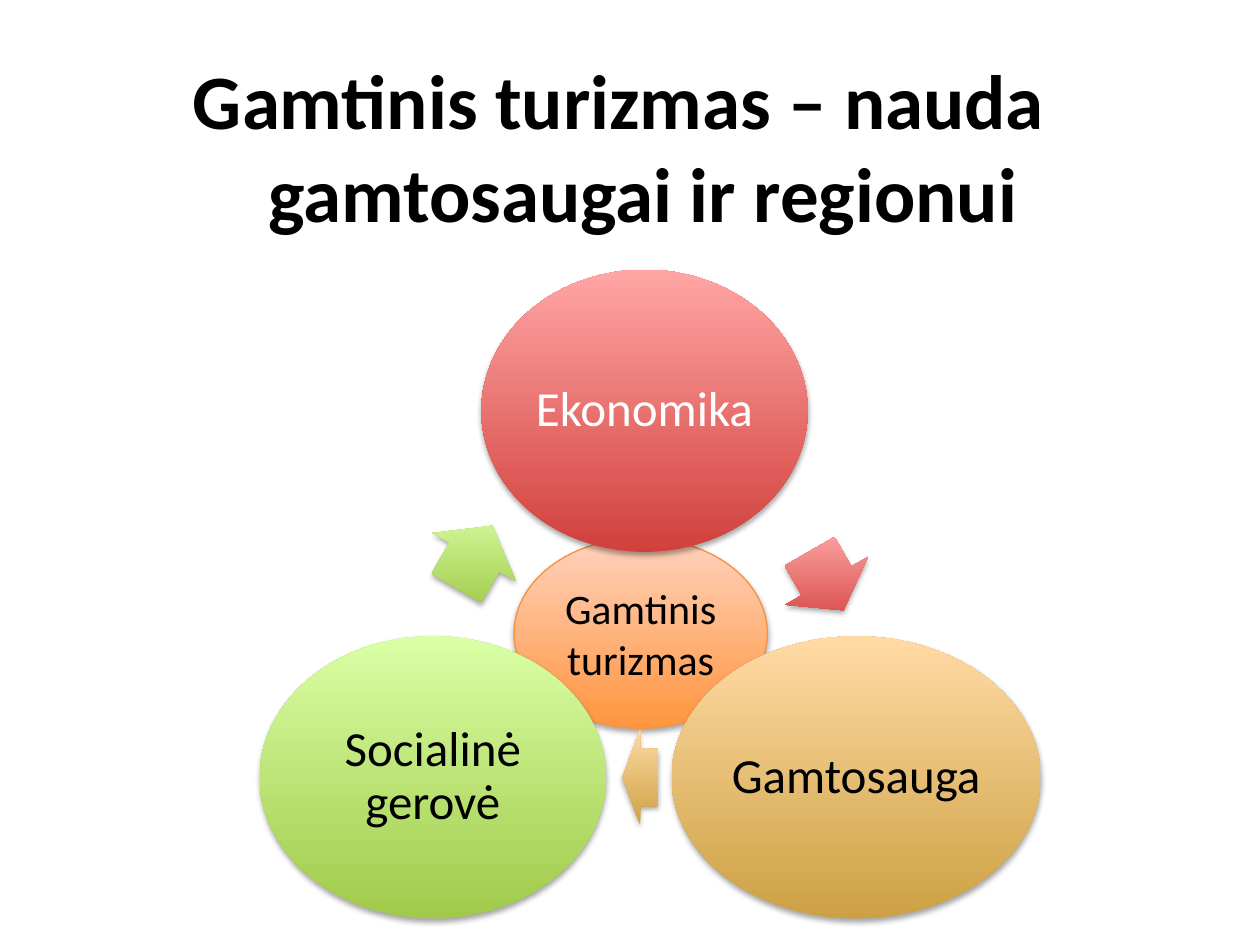
import math
from dataclasses import dataclass

import pptx
import pptx.dml.color
import pptx.enum.shapes
import pptx.enum.text
import pptx.oxml.ns
import pptx.util
from lxml import etree
from pptx.util import Inches

KIND = pptx.enum.shapes.MSO_SHAPE
ALIGN = pptx.enum.text.PP_ALIGN
ANCHOR = pptx.enum.text.MSO_ANCHOR
qn = pptx.oxml.ns.qn


@dataclass(frozen=True)
class Theme:
    font: str = "Calibri"
    title: int = 44
    label: int = 28
    core: int = 24
    dark: str = "000000"
    light: str = "FFFFFF"
    edge: str = "F69240"
    orange: tuple = ("FF953E", "FFD2BD")
    red: tuple = ("D1403C", "FFA6A5")
    tan: tuple = ("CDA143", "FFDAA5")
    green: tuple = ("A0CA4A", "DAFFA5")


@dataclass(frozen=True)
class Node:
    """One circle of the cycle, and the arrow that leaves it."""
    text: str
    width: float
    fill: tuple
    ink: str
    arrow_x: float
    arrow_y: float
    arrow_w: float


THEME = Theme()
HUB_X, HUB_Y, RADIUS = 5.115, 5.2, 1.94
NODE_H, ARROW_H = 2.24, 0.76
NODES = (
    Node("Ekonomika", 2.59, THEME.red, THEME.light, 6.56, 4.61, 0.54),
    Node("Gamtosauga", 2.93, THEME.tan, THEME.dark, 5.08, 6.17, 0.28),
    Node("Socialinė gerovė", 2.75, THEME.green, THEME.dark, 3.765, 4.42, 0.57),
)


def rgb(code: str):
    return pptx.dml.color.RGBColor.from_string(code)


def add_shade(shape) -> None:
    """Give the shape a soft shadow below it."""
    shape.shadow.inherit = False
    effects = shape._element.spPr.find(qn("a:effectLst"))
    outer = etree.SubElement(effects, qn("a:outerShdw"), blurRad="40000",
                             dist="23000", dir="5400000", rotWithShape="0")
    black = etree.SubElement(outer, qn("a:srgbClr"), val=THEME.dark)
    etree.SubElement(black, qn("a:alpha"), val="35000")


def add_solid(slide, kind, x: float, y: float, w: float, h: float, tones: tuple):
    """Add a shape centred on x, y that fades upward through the tones."""
    shape = slide.shapes.add_shape(kind, Inches(x - w / 2), Inches(y - h / 2),
                                   Inches(w), Inches(h))
    shape.fill.gradient()
    shape.fill.gradient_angle = 90
    for stop, tone in zip(shape.fill.gradient_stops, tones):
        stop.color.rgb = rgb(tone)
    shape._element.spPr.find(qn("a:gradFill")).set("rotWithShape", "0")
    shape.line.fill.background()
    add_shade(shape)
    return shape


def write(shape, text: str, size: int, ink: str, bold: bool = False):
    frame = shape.text_frame
    frame.word_wrap = True
    para = frame.paragraphs[0]
    para.text = text
    para.alignment = ALIGN.CENTER
    para.font.name = THEME.font
    para.font.size = pptx.util.Pt(size)
    para.font.bold = bold
    para.font.color.rgb = rgb(ink)
    return para


def add_label(shape, text: str, size: int, ink: str, pad: float):
    frame = shape.text_frame
    frame.vertical_anchor = ANCHOR.MIDDLE
    frame.margin_left = frame.margin_right = Inches(pad)
    frame.margin_top = frame.margin_bottom = Inches(0.04)
    return write(shape, text, size, ink)


def add_title(slide) -> None:
    box = slide.shapes.add_textbox(Inches(0.61), Inches(0.37),
                                   Inches(8.61), Inches(1.41))
    para = write(box, "Gamtinis turizmas – nauda gamtosaugai ir regionui",
                 THEME.title, THEME.dark, True)
    props = para._p.get_or_add_pPr()
    props.set("marL", str(Inches(0.38)))
    props.set("indent", str(Inches(-0.38)))
    para.space_before = pptx.util.Pt(0)
    space = props.find(qn("a:spcBef"))
    space.clear()
    etree.SubElement(space, qn("a:spcPct"), val="20000")


def add_core(slide) -> None:
    core = add_solid(slide, KIND.OVAL, 5.085, 5.025, 2.01, 1.51, THEME.orange)
    core.line.color.rgb = rgb(THEME.edge)
    core.line.width = pptx.util.Pt(0.75)
    add_label(core, "Gamtinis turizmas", THEME.core, THEME.dark, 0.08)


def add_node(slide, node: Node, turn: int) -> None:
    angle = math.radians(turn - 90)
    disc = add_solid(slide, KIND.OVAL, HUB_X + RADIUS * math.cos(angle),
                     HUB_Y + RADIUS * math.sin(angle), node.width, NODE_H, node.fill)
    add_label(disc, node.text, THEME.label, node.ink, 0.04).line_spacing = 0.9
    arrow = add_solid(slide, KIND.RIGHT_ARROW, node.arrow_x, node.arrow_y,
                      node.arrow_w, ARROW_H, node.fill)
    arrow.adjustments[0] = 0.6
    arrow.adjustments[1] = 0.5
    arrow.rotation = turn + 60


def main() -> None:
    deck = pptx.Presentation()
    deck.slide_width, deck.slide_height = Inches(10), Inches(7.5)
    slide = deck.slides.add_slide(deck.slide_layouts[6])
    add_core(slide)
    add_title(slide)
    for i, node in enumerate(NODES):
        add_node(slide, node, 120 * i)
    deck.save("out.pptx")


if __name__ == "__main__":
    main()
